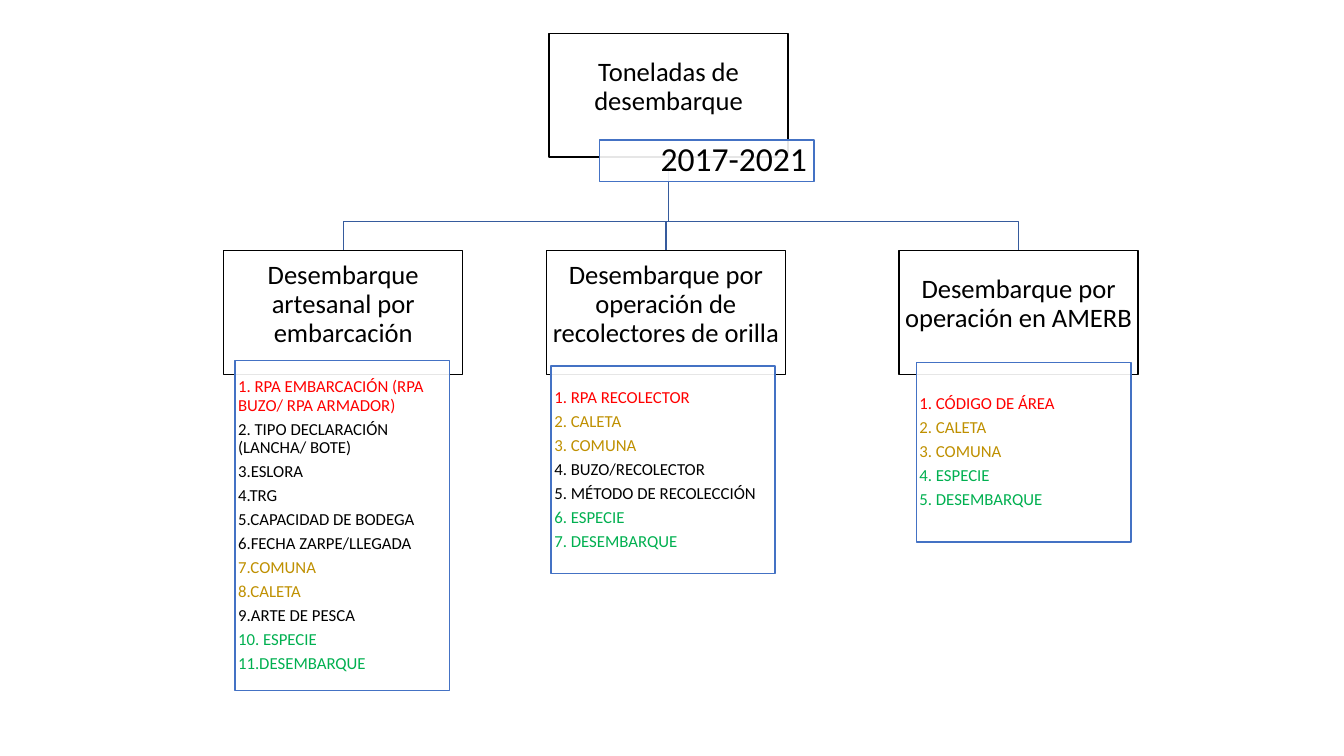
import collections

import lxml.etree
import pptx
import pptx.dml.color
import pptx.enum.shapes
import pptx.enum.text
import pptx.oxml.ns
import pptx.util

Cm = pptx.util.Cm
Pt = pptx.util.Pt
RGBColor = pptx.dml.color.RGBColor
ALIGN = pptx.enum.text.PP_ALIGN

WHITE = RGBColor(0xFF, 0xFF, 0xFF)
BLACK = RGBColor(0x00, 0x00, 0x00)
RED = RGBColor(0xFF, 0x00, 0x00)
GOLD = RGBColor(0xBF, 0x90, 0x00)
GREEN = RGBColor(0x00, 0xB0, 0x50)
BLUE = RGBColor(0x44, 0x72, 0xC4)
DARK_BLUE = RGBColor(0x36, 0x5B, 0x9D)

Box = collections.namedtuple("Box", "left top width height")
Branch = collections.namedtuple("Branch", "heading left detail_box items")

HEADING_WIDTH = 6.02
HEADING_HEIGHT = 3.12
BRANCH_TOP = 6.32
BEND_TOP = 5.59
HEADING_MARGINS = (0.03, 0.03, 0.03, 0.43)
YEAR_MARGINS = (0.18, 0.05, 0.18, 0.05)
DETAIL_MARGINS = (0.08, 0.03, 0.08, 0.03)

ROOT_BOX = Box(13.84, 0.84, HEADING_WIDTH, HEADING_HEIGHT)
YEAR_BOX = Box(15.11, 3.53, 5.41, 1.04)

BRANCHES = [
    Branch("Desembarque artesanal por embarcación", 5.64, Box(5.92, 9.09, 5.41, 8.31), [
        ("1. RPA EMBARCACIÓN (RPA BUZO/ RPA ARMADOR)", RED),
        ("2. TIPO DECLARACIÓN (LANCHA/ BOTE)", BLACK),
        ("3.ESLORA", BLACK),
        ("4.TRG", BLACK),
        ("5.CAPACIDAD DE BODEGA", BLACK),
        ("6.FECHA ZARPE/LLEGADA", BLACK),
        ("7.COMUNA", GOLD),
        ("8.CALETA", GOLD),
        ("9.ARTE DE PESCA", BLACK),
        ("10. ESPECIE", GREEN),
        ("11.DESEMBARQUE", GREEN),
    ]),
    Branch("Desembarque por operación de recolectores de orilla", 13.77, Box(13.89, 9.22, 5.64, 5.23), [
        ("1. RPA RECOLECTOR", RED),
        ("2. CALETA", GOLD),
        ("3. COMUNA", GOLD),
        ("4. BUZO/RECOLECTOR", BLACK),
        ("5. MÉTODO DE RECOLECCIÓN", BLACK),
        ("6. ESPECIE", GREEN),
        ("7. DESEMBARQUE", GREEN),
    ]),
    Branch("Desembarque por operación en AMERB", 22.66, Box(23.09, 9.14, 5.41, 4.52), [
        ("1. CÓDIGO DE ÁREA", RED),
        ("2. CALETA", GOLD),
        ("3. COMUNA", GOLD),
        ("4. ESPECIE", GREEN),
        ("5. DESEMBARQUE", GREEN),
    ]),
]


def add_box(slide, box, items, size, alignment, margins, line_color):
    shape = slide.shapes.add_shape(
        pptx.enum.shapes.MSO_SHAPE.RECTANGLE, *(Cm(length) for length in box))
    shape.shadow.inherit = False
    shape.fill.solid()
    shape.fill.fore_color.rgb = WHITE
    shape.line.color.rgb = line_color
    shape.line.width = Pt(1)
    frame = shape.text_frame
    frame.word_wrap = True
    frame.vertical_anchor = pptx.enum.text.MSO_ANCHOR.MIDDLE
    (frame.margin_left, frame.margin_top,
     frame.margin_right, frame.margin_bottom) = (Cm(margin) for margin in margins)
    for index, (text, color) in enumerate(items):
        paragraph = frame.add_paragraph() if index else frame.paragraphs[0]
        paragraph.alignment = alignment
        paragraph.line_spacing = 0.9
        paragraph.space_after = Pt(round(size * 0.35, 1))
        run = paragraph.add_run()
        run.text = text
        run.font.name = "Calibri"
        run.font.size = Pt(size)
        run.font.color.rgb = color
    return shape


def add_heading(slide, box, text):
    add_box(slide, box, [(text, BLACK)], 19, ALIGN.CENTER, HEADING_MARGINS, BLACK)


def add_overlay(slide, box, items, size, alignment, margins):
    shape = add_box(slide, box, items, size, alignment, margins, BLUE)
    color = shape.fill._xPr.find(".//" + pptx.oxml.ns.qn("a:srgbClr"))
    lxml.etree.SubElement(color, pptx.oxml.ns.qn("a:alpha"), val="90000")


def add_link(slide, parent, child):
    start = parent.left + parent.width / 2
    end = child.left + child.width / 2
    builder = slide.shapes.build_freeform(Cm(start), Cm(parent.top + parent.height))
    corners = [(start, BEND_TOP), (end, BEND_TOP), (end, child.top)]
    builder.add_line_segments([(Cm(x), Cm(y)) for x, y in corners], close=False)
    shape = builder.convert_to_shape()
    shape.shadow.inherit = False
    shape.fill.background()
    shape.line.color.rgb = DARK_BLUE
    shape.line.width = Pt(1)


def add_root(slide, box):
    add_heading(slide, box, "Toneladas de desembarque")
    add_overlay(slide, YEAR_BOX, [("2017-2021", BLACK)], 24, ALIGN.RIGHT, YEAR_MARGINS)


def add_branch(slide, box, branch):
    add_heading(slide, box, branch.heading)
    add_overlay(slide, branch.detail_box, branch.items, 12, ALIGN.LEFT, DETAIL_MARGINS)


def main():
    presentation = pptx.Presentation()
    presentation.slide_width = Cm(33.87)
    presentation.slide_height = Cm(19.05)
    slide = presentation.slides.add_slide(presentation.slide_layouts[6])
    branch_boxes = [
        Box(branch.left, BRANCH_TOP, HEADING_WIDTH, HEADING_HEIGHT) for branch in BRANCHES]
    for box in branch_boxes:
        add_link(slide, ROOT_BOX, box)
    add_root(slide, ROOT_BOX)
    for box, branch in zip(branch_boxes, BRANCHES):
        add_branch(slide, box, branch)
    presentation.save("out.pptx")


if __name__ == "__main__":
    main()
